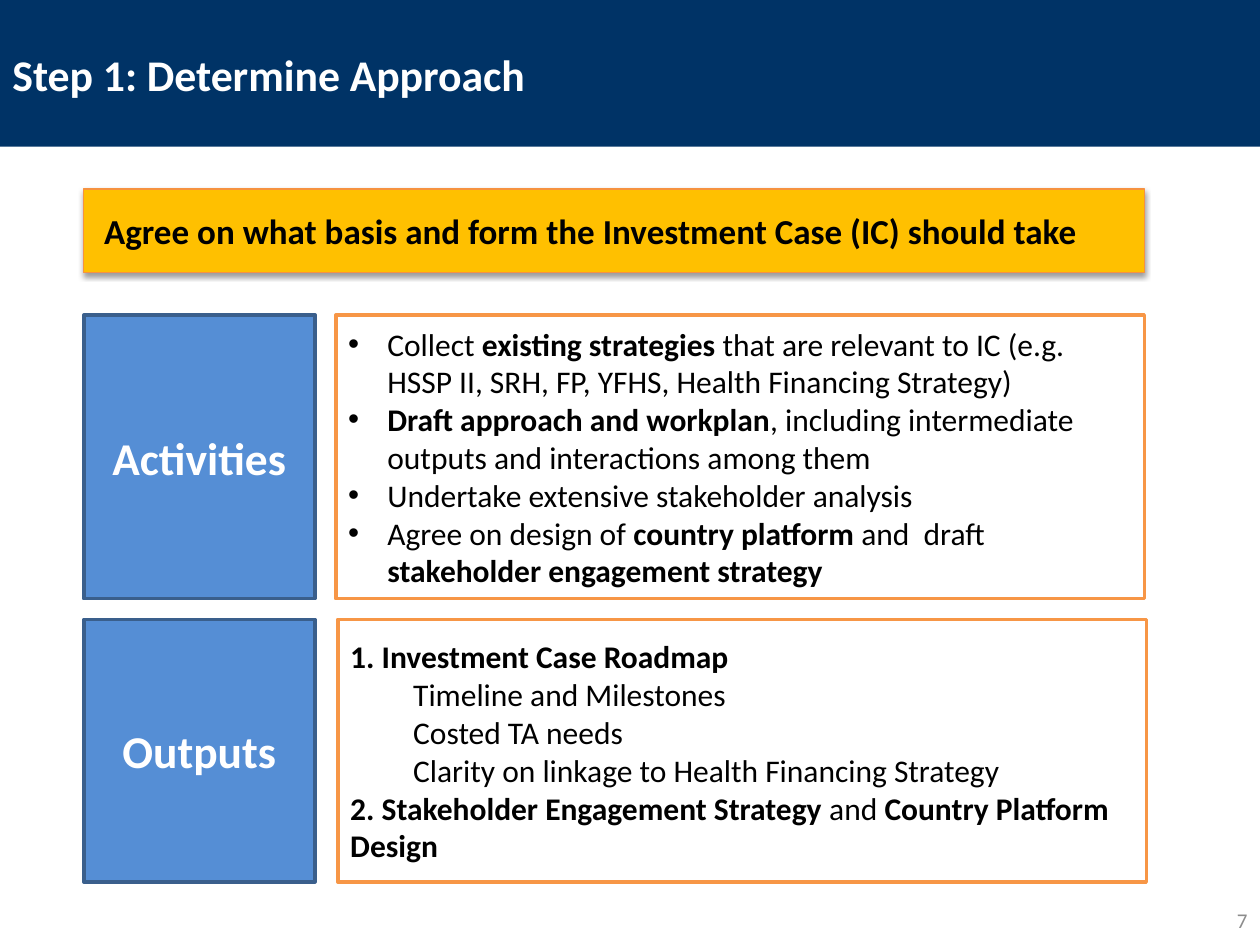
from dataclasses import dataclass

from lxml.etree import SubElement
from pptx import Presentation
from pptx.dml.color import RGBColor
from pptx.enum.shapes import MSO_SHAPE
from pptx.enum.text import MSO_ANCHOR, PP_ALIGN
from pptx.oxml.ns import qn
from pptx.util import Cm, Pt

COLORS = {
    "navy": "003366", "white": "FFFFFF", "black": "000000", "gray": "8C8C8C",
    "blue": "558ED5", "blue_edge": "3A5F8C",
    "orange": "F79646", "gold": "FFC000", "gold_edge": "F69240",
}
LEFT, LABEL_WIDTH, DETAIL_WIDTH = 1.69, 4.66, 16.3
BULLET_INDENT, SUB_INDENT = 0.79, 1.27


@dataclass
class Line:
    text: str  # bold parts stand between ** marks
    bullet: bool = False
    indent: float = 0


@dataclass
class Box:
    left: float
    top: float
    width: float
    height: float
    lines: list[Line]
    size: float
    color: str = "black"
    fill: str | None = None
    edge: str | None = None
    edge_width: float = 2
    align: PP_ALIGN = PP_ALIGN.LEFT
    inset: float = 0.25


@dataclass
class Section:
    label: str
    top: float
    height: float
    detail_left: float
    lines: list[Line]


def color(name: str) -> RGBColor:
    return RGBColor.from_string(COLORS[name])


def write_line(paragraph, line: Line, box: Box) -> None:
    paragraph.alignment = box.align
    properties = paragraph._p.get_or_add_pPr()
    if line.bullet:
        properties.set("marL", str(Cm(BULLET_INDENT)))
        properties.set("indent", str(-Cm(BULLET_INDENT)))
        SubElement(properties, qn("a:buFont"), typeface="Arial")
        SubElement(properties, qn("a:buChar"), char="•")
    elif line.indent:
        paragraph.level = 1
        properties.set("marL", str(Cm(line.indent)))
        properties.set("indent", "0")
    for index, part in enumerate(line.text.split("**")):
        if not part:
            continue
        run = paragraph.add_run()
        run.text = part
        run.font.color.rgb = color(box.color)
        font_format = {"name": "Calibri", "size": Pt(box.size), "bold": index % 2 == 1}
        for name, value in font_format.items():
            setattr(run.font, name, value)


def draw_box(slide, box: Box):
    place = [Cm(value) for value in (box.left, box.top, box.width, box.height)]
    if box.fill:
        shape = slide.shapes.add_shape(MSO_SHAPE.RECTANGLE, *place)
        shape.shadow.inherit = False
        shape.fill.solid()
        shape.fill.fore_color.rgb = color(box.fill)
        if box.edge:
            shape.line.color.rgb = color(box.edge)
            shape.line.width = Pt(box.edge_width)
        else:
            shape.line.fill.background()
    else:
        shape = slide.shapes.add_textbox(*place)
    frame = shape.text_frame
    frame_format = {"word_wrap": True, "vertical_anchor": MSO_ANCHOR.MIDDLE,
                    "margin_left": Cm(box.inset)}
    for name, value in frame_format.items():
        setattr(frame, name, value)
    for index, line in enumerate(box.lines):
        paragraph = frame.add_paragraph() if index else frame.paragraphs[0]
        write_line(paragraph, line, box)
    return shape


def add_shadow(shape) -> None:
    effects = shape._element.spPr.find(qn("a:effectLst"))
    shadow = SubElement(effects, qn("a:outerShdw"), blurRad=str(Pt(3.1)),
                        dist=str(Pt(1.6)), dir="5400000", rotWithShape="0")
    tint = SubElement(shadow, qn("a:srgbClr"), val=COLORS["black"])
    SubElement(tint, qn("a:alpha"), val="38000")


def draw_section(slide, section: Section) -> None:
    draw_box(slide, Box(LEFT, section.top, LABEL_WIDTH, section.height,
                        [Line(f"**{section.label}**")], 26, "white",
                        "blue", "blue_edge", align=PP_ALIGN.CENTER))
    draw_box(slide, Box(section.detail_left, section.top, DETAIL_WIDTH, section.height,
                        section.lines, 18, fill="white", edge="orange"))


SECTIONS = [
    Section("Activities", 6.35, 5.72, 6.77, [
        Line("Collect **existing strategies **that are relevant to IC "
             "(e.g. HSSP II, SRH, FP, YFHS, Health Financing Strategy)", bullet=True),
        Line("**Draft approach and workplan**, including intermediate outputs "
             "and interactions among them", bullet=True),
        Line("Undertake extensive stakeholder analysis", bullet=True),
        Line("Agree on design of **country platform **and  draft"
             "** stakeholder engagement strategy**", bullet=True),
    ]),
    Section("Outputs", 12.49, 5.29, 6.81, [
        Line("**1. Investment Case Roadmap**"),
        Line("Timeline and Milestones", indent=SUB_INDENT),
        Line("Costed TA needs", indent=SUB_INDENT),
        Line("Clarity on linkage to Health Financing Strategy", indent=SUB_INDENT),
        Line("**2. Stakeholder Engagement Strategy **and **Country Platform Design**"),
    ]),
]


def main() -> None:
    presentation = Presentation()
    presentation.slide_width, presentation.slide_height = Cm(25.4), Cm(19.05)
    slide = presentation.slides.add_slide(presentation.slide_layouts[6])

    # Page number
    draw_box(slide, Box(19.48, 18.03, 5.92, 1.02, [Line("7")], 12, "gray",
                        align=PP_ALIGN.RIGHT))

    # Title band
    draw_box(slide, Box(0, 0, 25.4, 2.96, [], 25, fill="navy"))
    draw_box(slide, Box(0, 0.13, 25.4, 2.72,
                        [Line("**Step 1: Determine Approach**")], 25, "white"))

    # Labelled sections
    for section in SECTIONS:
        draw_section(slide, section)

    # Goal banner
    goal = "**Agree on what basis and form the Investment Case (IC) should take**"
    banner = draw_box(slide, Box(LEFT, 3.81, 21.38, 1.69, [Line(goal)], 20, fill="gold",
                                 edge="gold_edge", edge_width=0.75, inset=0.41))
    add_shadow(banner)

    presentation.save("out.pptx")


if __name__ == "__main__":
    main()
